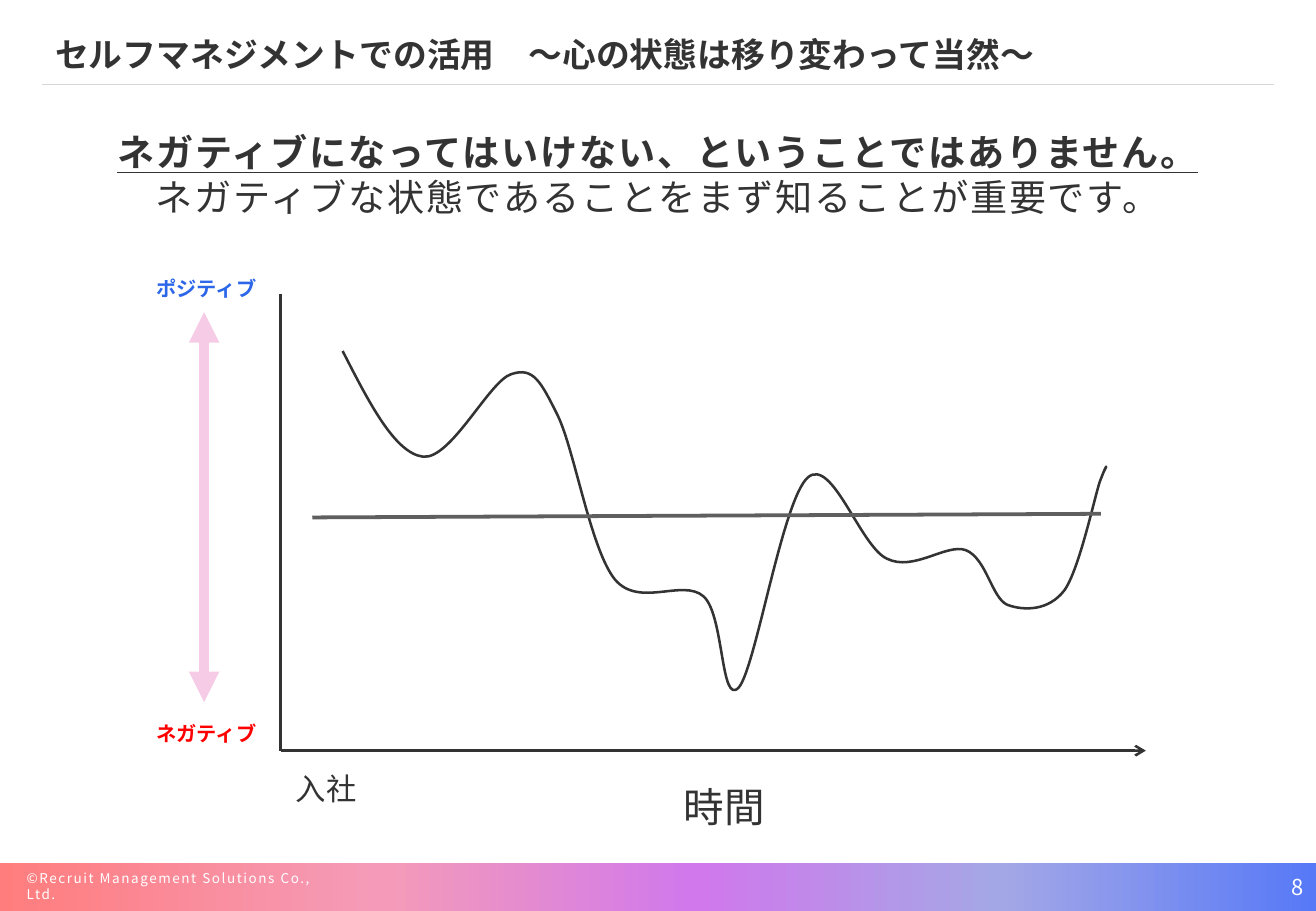
from typing import NamedTuple

import lxml.etree
import pptx
import pptx.dml.color
import pptx.enum.shapes
import pptx.enum.text
import pptx.oxml.ns
import pptx.util

WIDE = pptx.util.Inches(10.83)
HIGH = pptx.util.Inches(7.5)
COLS, ROWS = 108.3, 75
SANS = "Noto Sans CJK SC"
GOTHIC = "Noto Sans CJK JP"
INK = "333333"
WHITE = "FFFFFF"
ALIGN = pptx.enum.text.PP_ALIGN
ANCHOR = pptx.enum.text.MSO_ANCHOR


class Box(NamedTuple):
    left: float
    top: float
    wide: float
    high: float


class Rule(NamedTuple):
    start: tuple[float, float]
    end: tuple[float, float]
    tint: str
    weight: float
    head: str = ""
    tail: str = ""


class Label(NamedTuple):
    words: str
    box: Box
    style: dict


BAND = Box(0, 71.05, COLS, 3.95)
STOPS = [(0, "FF7D7D"), (29, "F59BB9"), (53, "D078EC"), (76, "A4A7E6"), (100, "5779F7")]

RULES = [
    Rule((3.46, 6.95), (104.85, 6.95), "D5D6D8", 0.5),
    Rule((23.1, 24.2), (23.1, 61.8), INK, 1.5),
    Rule((23.1, 61.8), (94.3, 61.8), INK, 1.5, tail="arrow"),
    Rule((16.8, 57.8), (16.8, 25.7), "F6CBE5", 6, "triangle", "triangle"),
]
MIDDLE = Rule((25.7, 42.6), (90.6, 42.3), "5F5F5F", 2.25)

POLE = dict(font=GOTHIC, size=12, bold=True, wrap=False)
LABELS = [
    Label("©Recruit Management Solutions Co., Ltd.", Box(1.2, 71.75, 26.9, 2.4),
          dict(size=8, tint=WHITE, gap=0.9, anchor=ANCHOR.MIDDLE)),
    Label("8", Box(83.9, 71, 24.4, 4),
          dict(size=13, tint=WHITE, align=ALIGN.RIGHT, anchor=ANCHOR.MIDDLE)),
    Label("時間", Box(52.35, 62.15, 14.5, 6.4),
          dict(font=GOTHIC, size=24, align=ALIGN.CENTER, anchor=ANCHOR.MIDDLE, lead=1.5)),
    Label("ポジティブ", Box(11.9, 22.25, 10.4, 3), dict(tint="2C67E9", **POLE)),
    Label("ネガティブ", Box(11.9, 58.9, 10.4, 3), dict(tint="FF0000", **POLE)),
    Label("入社", Box(23.35, 61.4, 8.2, 6.4), dict(font=GOTHIC, size=18, lead=1.5)),
]

MOOD = [
    (28.2, 28.9),
    (30.4, 33.2), (32.5, 37.3), (34.8, 37.6),
    (37.1, 37.9), (40.3, 31.3), (42.1, 30.8),
    (43.9, 30.2), (44.5, 31.4), (45.9, 34.2),
    (47.3, 37.1), (48.6, 45.2), (50.6, 47.7),
    (52.6, 50.1), (56.2, 47.6), (57.9, 49.1),
    (59.6, 50.6), (59.3, 58.2), (60.8, 56.6),
    (62.2, 55), (64.4, 41.1), (66.5, 39.3),
    (68.5, 37.6), (70.8, 45), (73, 46),
    (75.2, 47.1), (77.9, 44.7), (79.5, 45.3),
    (81.2, 46), (81.6, 49.2), (82.9, 49.8),
    (84.3, 50.3), (86.3, 50.3), (87.6, 48.6),
    (88.8, 46.9), (90, 41.3), (90.5, 39.7),
    (91.1, 38.1), (91.2, 38.2), (90.8, 38.9),
]


def col(n: float) -> int:
    return round(WIDE * n / COLS)


def row(n: float) -> int:
    return round(HIGH * n / ROWS)


def place(box: Box) -> tuple[int, int, int, int]:
    return col(box.left), row(box.top), col(box.wide), row(box.high)


def hue(code: str) -> pptx.dml.color.RGBColor:
    return pptx.dml.color.RGBColor.from_string(code)


def add(parent, tag: str, **traits: str):
    node = lxml.etree.SubElement(parent, pptx.oxml.ns.qn(tag))
    for name, value in traits.items():
        node.set(name, value)
    return node


def write(para, words: str, *, size: float, font: str = SANS, tint: str = INK,
          bold: bool = False, under: bool = False, gap: float = 0,
          align=ALIGN.LEFT, lead: float = 1) -> None:
    para.alignment = align
    para.line_spacing = lead
    run = para.add_run()
    run.text = words
    run.font.size = pptx.util.Pt(size)
    run.font.bold = bold
    run.font.underline = under
    run.font.color.rgb = hue(tint)
    run.font.name = font
    props = run._r.get_or_add_rPr()
    props.set("spc", str(round(gap * 100)))
    add(props, "a:ea", typeface=font)


def frame(slide, box: Box, anchor=ANCHOR.TOP, wrap: bool = True):
    body = slide.shapes.add_textbox(*place(box)).text_frame
    body.word_wrap = wrap
    body.vertical_anchor = anchor
    return body


def label(slide, item: Label) -> None:
    style = dict(item.style)
    body = frame(slide, item.box, style.pop("anchor", ANCHOR.TOP), style.pop("wrap", True))
    write(body.paragraphs[0], item.words, **style)


def rule(slide, item: Rule) -> None:
    (x1, y1), (x2, y2) = item.start, item.end
    line = slide.shapes.add_connector(
        pptx.enum.shapes.MSO_CONNECTOR.STRAIGHT, col(x1), row(y1), col(x2), row(y2))
    line.line.color.rgb = hue(item.tint)
    line.line.width = pptx.util.Pt(item.weight)
    stroke = line.line._get_or_add_ln()
    for tag, kind in (("a:headEnd", item.head), ("a:tailEnd", item.tail)):
        if kind:
            add(stroke, tag, type=kind)
    add(line._element.spPr, "a:effectLst")


def band(slide) -> None:
    shape = slide.shapes.add_shape(pptx.enum.shapes.MSO_SHAPE.RECTANGLE, *place(BAND))
    shape.shadow.inherit = False
    shape.line.fill.background()
    shape.fill.gradient()
    shape.fill.gradient_angle = 0
    stops = shape._element.spPr.find(".//" + pptx.oxml.ns.qn("a:gsLst"))
    for old in list(stops):
        stops.remove(old)
    for share, tint in STOPS:
        add(add(stops, "a:gs", pos=str(share * 1000)), "a:srgbClr", val=tint)


def curve(slide) -> None:
    dots = [(col(x), row(y)) for x, y in MOOD]
    pen = slide.shapes.build_freeform(*dots[0])
    pen.add_line_segments(dots[3::3], close=False)
    shape = pen.convert_to_shape()
    trace = shape._element.spPr.find(".//" + pptx.oxml.ns.qn("a:path"))
    for old in trace.findall(pptx.oxml.ns.qn("a:lnTo")):
        trace.remove(old)
    for i in range(1, len(dots), 3):
        bend = add(trace, "a:cubicBezTo")
        for x, y in dots[i:i + 3]:
            add(bend, "a:pt", x=str(x - shape.left), y=str(y - shape.top))
    shape.shadow.inherit = False
    shape.fill.background()
    shape.line.color.rgb = hue(INK)
    shape.line.width = pptx.util.Pt(1.5)


def main() -> None:
    deck = pptx.Presentation()
    deck.slide_width, deck.slide_height = WIDE, HIGH
    slide = deck.slides.add_slide(deck.slide_layouts[5])

    title = slide.shapes.title
    title.left, title.top, title.width, title.height = place(Box(3.54, 1.45, 93.4, 6))
    title.text_frame.auto_size = pptx.enum.text.MSO_AUTO_SIZE.NONE
    title.text_frame.vertical_anchor = ANCHOR.MIDDLE
    write(title.text_frame.paragraphs[0],
          "セルフマネジメントでの活用　～心の状態は移り変わって当然～", size=20, bold=True)

    band(slide)
    for item in RULES:
        rule(slide, item)
    for item in LABELS:
        label(slide, item)
    curve(slide)
    rule(slide, MIDDLE)

    lead = frame(slide, Box(4.45, 10.2, 99.4, 8.4))
    style = dict(size=22, gap=1.1, align=ALIGN.CENTER)
    write(lead.paragraphs[0], "ネガティブになってはいけない、ということではありません。",
          bold=True, under=True, **style)
    write(lead.add_paragraph(), "ネガティブな状態であることをまず知ることが重要です。", **style)

    deck.save("out.pptx")


if __name__ == "__main__":
    main()
